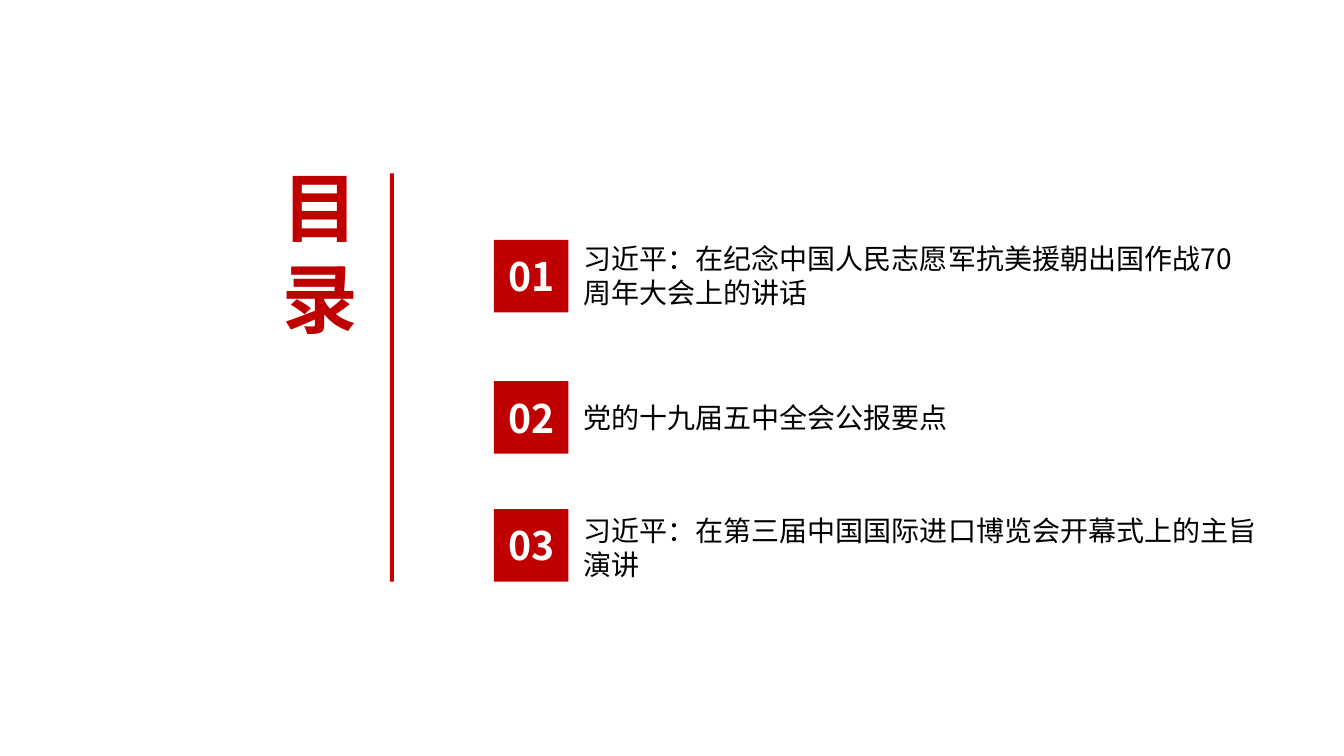
from pptx import Presentation
from pptx.dml.color import RGBColor
from pptx.enum.shapes import MSO_SHAPE as Shape
from pptx.enum.text import MSO_ANCHOR as Anchor, MSO_AUTO_SIZE as AutoSize, PP_ALIGN as Align
from pptx.oxml.ns import qn
from pptx.util import Pt
from lxml.etree import SubElement

FONT = "Noto Sans CJK SC"
COLORS = {"red": "C00000", "rule": "C80000", "black": "000000", "white": "FFFFFF"}
AGENDA = [
    ("01", 171.4, "习近平：在纪念中国人民志愿军抗美援朝出国作战70周年大会上的讲话", 169.2, 493.9, 55.4),
    ("02", 272.2, "党的十九届五中全会公报要点", 282.2, 475.2, 31.7),
    ("03", 363.6, "习近平：在第三届中国国际进口博览会开幕式上的主旨演讲", 363.6, 499, 55.4),
]


class AgendaSlide:
    """Holds the style and the current slide, and draws its elements."""

    def __init__(self, presentation):
        """Add a slide with a title placeholder."""
        self.slide = presentation.slides.add_slide(presentation.slide_layouts[5])

    def add_text(self, shape, text, size, color, bold=False, align=Align.LEFT, anchor=Anchor.TOP):
        """Put one formatted run into a shape."""
        frame = shape.text_frame
        frame.word_wrap = True
        frame.auto_size = AutoSize.NONE
        frame.vertical_anchor = anchor
        paragraph = frame.paragraphs[0]
        paragraph.alignment = align
        run = paragraph.add_run()
        run.text = text
        run.font.size = Pt(size)
        run.font.bold = bold
        run.font.name = FONT
        run.font.color.rgb = RGBColor.from_string(COLORS[color])
        SubElement(run._r.get_or_add_rPr(), qn("a:ea"), typeface=FONT)

    def title(self, text, left, top, width, height):
        """Move the title placeholder and fill it."""
        shape = self.slide.shapes.title
        shape.left, shape.top, shape.width, shape.height = map(Pt, (left, top, width, height))
        frame = shape.text_frame
        frame.margin_left = frame.margin_right = Pt(5)
        frame.margin_top = frame.margin_bottom = Pt(2.9)
        self.add_text(shape, text, 54, "red", bold=True)

    def block(self, shapes, color, left, top, width, height):
        """Draw a plain filled rectangle."""
        shape = shapes.add_shape(Shape.RECTANGLE, *map(Pt, (left, top, width, height)))
        shape.shadow.inherit = False
        shape.fill.solid()
        shape.fill.fore_color.rgb = RGBColor.from_string(COLORS[color])
        shape.line.fill.background()
        return shape

    def entry(self, number, badge_top, text, top, width, height):
        """Draw a numbered agenda entry as a group."""
        shapes = self.slide.shapes.add_group_shape().shapes
        label = shapes.add_textbox(*map(Pt, (409.7, top, width, height)))
        self.add_text(label, text, 20, "black")
        badge = self.block(shapes, "red", 352.8, badge_top, 53.3, 51.8)
        self.add_text(badge, number, 28, "white", True, Align.CENTER, Anchor.MIDDLE)


def main():
    """Build and save the agenda slide."""
    presentation = Presentation()
    presentation.slide_width, presentation.slide_height = Pt(960), Pt(540)
    agenda = AgendaSlide(presentation)
    agenda.title("目录", 196.6, 112.3, 86.4, 136.1)
    agenda.block(agenda.slide.shapes, "rule", 278.6, 123.8, 2.9, 291.6)
    for entry in AGENDA:
        agenda.entry(*entry)
    presentation.save("out.pptx")


if __name__ == "__main__":
    main()
